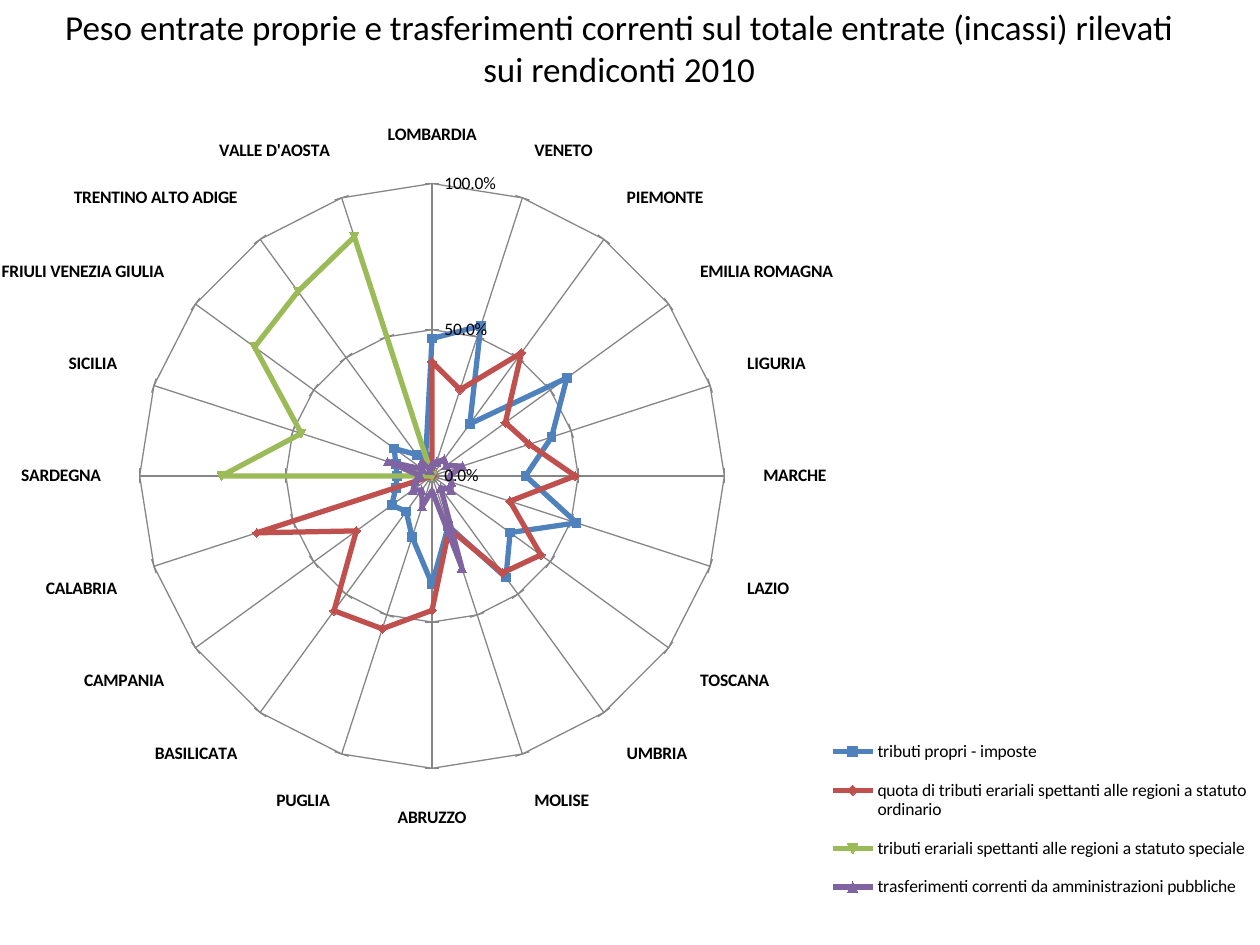
from dataclasses import dataclass

from lxml import etree
from pptx import Presentation
from pptx.chart.data import CategoryChartData
from pptx.dml.color import RGBColor
from pptx.enum.chart import XL_CHART_TYPE, XL_LEGEND_POSITION, XL_TICK_MARK
from pptx.enum.text import MSO_ANCHOR, PP_ALIGN
from pptx.oxml.ns import qn
from pptx.util import Inches, Pt

RADAR = XL_CHART_TYPE.RADAR_MARKERS
RIGHT = XL_LEGEND_POSITION.RIGHT
CROSS = XL_TICK_MARK.CROSS
MIDDLE = MSO_ANCHOR.MIDDLE
CENTER = PP_ALIGN.CENTER
BLACK = RGBColor(0x00, 0x00, 0x00)
GRAY = RGBColor(0x86, 0x86, 0x86)
BLUE = RGBColor(0x4F, 0x81, 0xBD)
RED = RGBColor(0xC0, 0x50, 0x4D)
GREEN = RGBColor(0x9B, 0xBB, 0x59)
PURPLE = RGBColor(0x80, 0x64, 0xA2)
FONT_NAME = "Calibri"
TITLE = (
    "Peso entrate proprie e trasferimenti correnti sul totale entrate "
    "(incassi) rilevati sui rendiconti 2010"
)
REGIONS = (
    "LOMBARDIA", "VENETO", "PIEMONTE", "EMILIA ROMAGNA", "LIGURIA",
    "MARCHE", "LAZIO", "TOSCANA", "UMBRIA", "MOLISE",
    "ABRUZZO", "PUGLIA", "BASILICATA", "CAMPANIA", "CALABRIA",
    "SARDEGNA", "SICILIA", "FRIULI VENEZIA GIULIA",
    "TRENTINO ALTO ADIGE", "VALLE D'AOSTA",
)
SPECIAL_COUNT = 5
ORDINARY_COUNT = len(REGIONS) - SPECIAL_COUNT


@dataclass(frozen=True)
class Box:
    x: float
    y: float
    w: float
    h: float


@dataclass(frozen=True)
class RevenueSeries:
    name: str
    color: RGBColor
    shares: tuple


TITLE_BOX = Box(0.35, 0, 9.13, 0.76)
CHART_BOX = Box(-0.14, 0.76, 10.14, 6.64)
PLOT_SHARE = Box(0.123, 0.105, 0.458, 0.699)
LEGEND_SHARE = Box(0.655, 0.75, 0.345, 0.23)
SERIES = (
    RevenueSeries(
        "tributi propri - imposte", BLUE,
        (0.47, 0.54, 0.22, 0.57, 0.43, 0.32, 0.52, 0.33, 0.43, 0.18,
         0.37, 0.22, 0.15, 0.17, 0.13, 0.12, 0.13, 0.16, 0.09, 0.07),
    ),
    RevenueSeries(
        "quota di tributi erariali spettanti alle regioni a statuto ordinario", RED,
        (0.39, 0.31, 0.52, 0.31, 0.35, 0.49, 0.28, 0.46, 0.41, 0.19,
         0.46, 0.55, 0.57, 0.32, 0.63) + (0,) * SPECIAL_COUNT,
    ),
    RevenueSeries(
        "tributi erariali spettanti alle regioni a statuto speciale", GREEN,
        (0,) * ORDINARY_COUNT + (0.72, 0.47, 0.75, 0.78, 0.86),
    ),
    RevenueSeries(
        "trasferimenti correnti da amministrazioni pubbliche", PURPLE,
        (0.04, 0.05, 0.07, 0.06, 0.11, 0.06, 0.07, 0.08, 0.05, 0.33,
         0.05, 0.11, 0.06, 0.08, 0.06, 0.04, 0.16, 0.04, 0.06, 0.02),
    ),
)


def set_values(target, **values) -> None:
    """Set several attributes of one object."""
    for name, value in values.items():
        setattr(target, name, value)


def set_font(font, size: float, bold: bool = False) -> None:
    """Apply the slide's typeface in black."""
    set_values(font, name=FONT_NAME, size=Pt(size), bold=bold)
    font.color.rgb = BLACK


def set_line(line, color: RGBColor, width: float) -> None:
    """Colour a line and give it a width."""
    line.color.rgb = color
    line.width = Pt(width)


def emu(box: Box) -> tuple:
    """Return the box as slide lengths."""
    return tuple(Inches(length) for length in (box.x, box.y, box.w, box.h))


def set_layout(parent, index: int, share: Box, inner: bool = False) -> None:
    """Place a chart part by shares of the chart's size."""
    for old_layout in parent.findall(qn("c:layout")):
        parent.remove(old_layout)
    layout = etree.Element(qn("c:layout"))
    manual = etree.SubElement(layout, qn("c:manualLayout"))
    values = {"layoutTarget": "inner"} if inner else {}
    values.update(xMode="edge", yMode="edge", x=share.x, y=share.y, w=share.w, h=share.h)
    for name, value in values.items():
        etree.SubElement(manual, qn(f"c:{name}")).set("val", str(value))
    parent.insert(index, layout)


def add_title(slide) -> None:
    """Add the centred heading."""
    frame = slide.shapes.add_textbox(*emu(TITLE_BOX)).text_frame
    set_values(frame, word_wrap=True, vertical_anchor=MIDDLE)
    paragraph = frame.paragraphs[0]
    set_values(paragraph, text=TITLE, alignment=CENTER)
    set_font(paragraph.runs[0].font, 20)


def style_axes(chart) -> None:
    """Format the region spokes and the percentage scale."""
    set_values(chart.value_axis, minimum_scale=0, maximum_scale=1, major_unit=0.5)
    for axis, bold in ((chart.category_axis, True), (chart.value_axis, False)):
        set_values(axis, major_tick_mark=CROSS, has_major_gridlines=True)
        set_line(axis.major_gridlines.format.line, GRAY, 0.75)
        set_line(axis.format.line, GRAY, 0.75)
        set_font(axis.tick_labels.font, 10, bold)
    set_values(
        chart.value_axis.tick_labels, number_format="0.0%", number_format_is_linked=False
    )


def add_radar(slide) -> None:
    """Add the radar chart of revenue shares by region."""
    data = CategoryChartData(number_format="0.0%")
    data.categories = REGIONS
    for series in SERIES:
        data.add_series(series.name, series.shares)
    chart = slide.shapes.add_chart(RADAR, *emu(CHART_BOX), data).chart
    set_values(chart, has_title=False, has_legend=True)
    set_font(chart.font, 10)
    style_axes(chart)
    plot = chart.plots[0]
    plot.vary_by_categories = False
    for drawn, series in zip(plot.series, SERIES):
        drawn.smooth = False
        set_line(drawn.format.line, series.color, 3)
        marker = drawn.marker.format
        marker.fill.solid()
        marker.fill.fore_color.rgb = series.color
        set_line(marker.line, series.color, 0.75)
    legend = chart.legend
    set_values(legend, position=RIGHT, include_in_layout=False)
    set_font(legend.font, 10)
    plot_area = chart.element.find(".//" + qn("c:plotArea"))
    set_layout(plot_area, 0, PLOT_SHARE, inner=True)
    set_layout(chart.element.find(".//" + qn("c:legend")), 1, LEGEND_SHARE)


def main() -> None:
    """Build and save the slide."""
    presentation = Presentation()
    set_values(presentation, slide_width=Inches(10), slide_height=Inches(7.5))
    slide = presentation.slides.add_slide(presentation.slide_layouts[6])
    add_title(slide)
    add_radar(slide)
    presentation.save("out.pptx")


if __name__ == "__main__":
    main()
